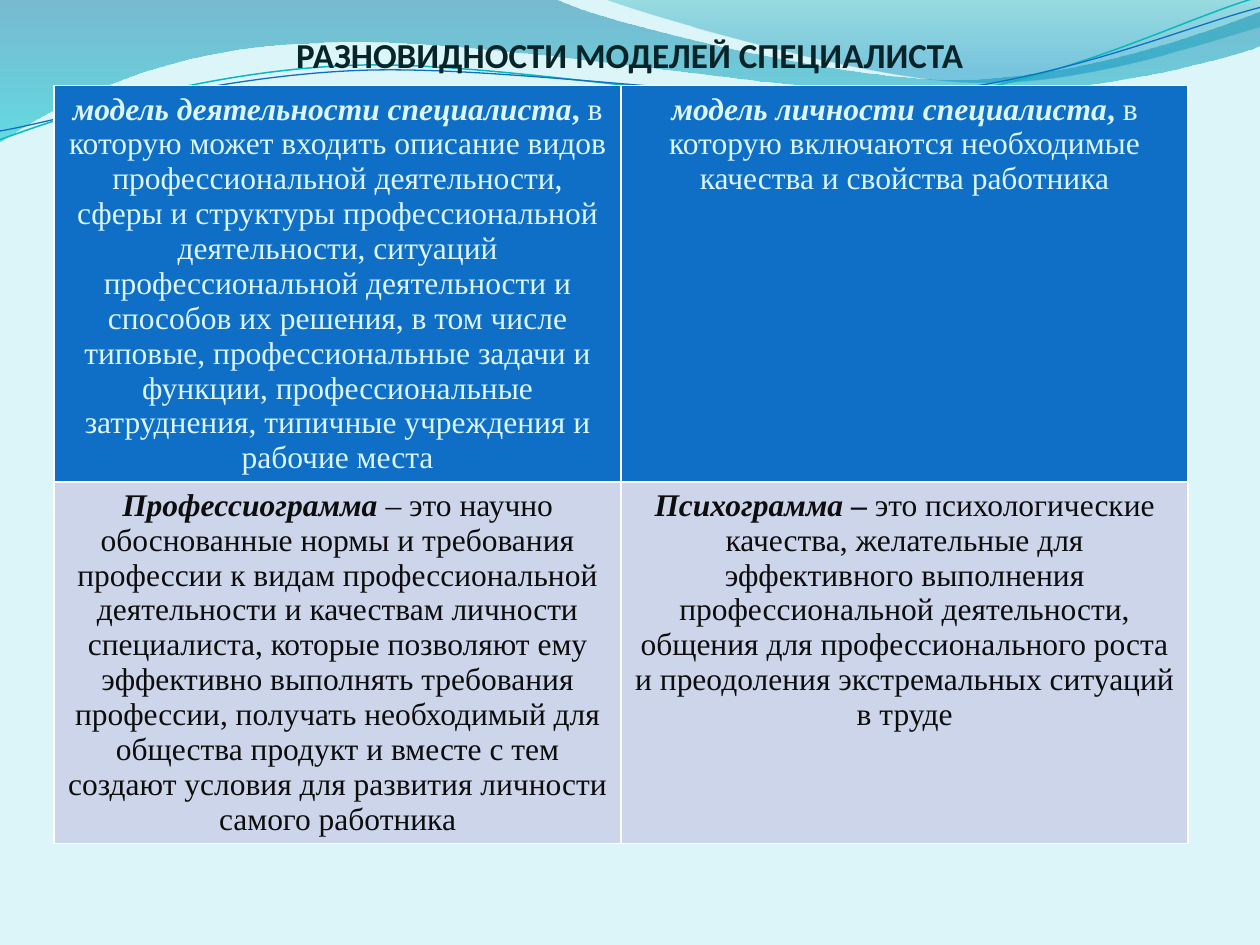
import math

from lxml import etree
from pptx import Presentation
from pptx import util as u
from pptx.dml.color import RGBColor
from pptx.enum import text
from pptx.oxml.ns import qn

PX = 9144  # 100 px to the inch

PALE = RGBColor(0xDB, 0xF5, 0xF9)
BLUE = RGBColor(0x0F, 0x6F, 0xC6)
LILAC = RGBColor(0xCC, 0xD5, 0xEA)
INK = RGBColor(0x07, 0x24, 0x28)
BLACK = RGBColor(0x0D, 0x0D, 0x0D)
TEAL = RGBColor(0x0A, 0xB8, 0xBF)
DEEP = RGBColor(0x00, 0x74, 0xA1)
CYAN = RGBColor(0x00, 0xC6, 0xCF)
GREEN = RGBColor(0x00, 0xA1, 0xA9)
AZURE = RGBColor(0x00, 0x8B, 0xBF)

# Outlines: a start point, then steps of one point (line) or three (curve)
BAND = [[(0, 0)], [(440, -1)],
        [(476, 17), (664, 63), (758, 63)], [(853, 63), (958, 26), (1000, 9)],
        [(1001, 36)],
        [(983, 44), (870, 76), (746, 75)], [(622, 75), (382, 28), (257, 34)],
        [(129, 36), (46, 83), (-1, 113)]]
CREST = [[(479, -1)], [(509, 11), (682, 62), (769, 65)],
         [(856, 69), (961, 32), (1000, 21)], [(1000, 0)]]
UPPER = [[(0, 111)], [(48, 93), (158, 57), (277, 52)],
         [(395, 47), (593, 89), (713, 80)], [(833, 71), (938, 15), (998, -2)]]
LOWER = [[(0, 104)], [(47, 96), (164, 61), (283, 56)],
         [(403, 51), (597, 84), (717, 75)], [(836, 67), (941, 21), (1000, 6)]]
TILT = 357.3

# Each cell is a list of (words, bold, italic)
CELLS = [
    [[("модель деятельности специалиста", True, True), (", ", True, False),
      ("в которую может входить описание видов профессиональной деятельности, "
       "сферы и структуры профессиональной деятельности, ситуаций "
       "профессиональной деятельности и способов их решения, в том числе "
       "типовые, профессиональные задачи и функции, профессиональные "
       "затруднения, типичные учреждения и рабочие места", False, False)],
     [("модель личности специалиста", True, True), (", ", True, False),
      ("в которую включаются необходимые качества и свойства работника",
       False, False)]],
    [[("Профессиограмма ", True, True),
      ("– это научно обоснованные нормы и требования профессии к видам "
       "профессиональной деятельности и качествам личности специалиста, "
       "которые позволяют ему эффективно выполнять требования профессии, "
       "получать необходимый для общества продукт и вместе с тем создают "
       "условия для развития личности самого работника", False, False)],
     [("Психограмма ", True, True), ("– ", True, False),
      ("это психологические качества, желательные для эффективного выполнения "
       "профессиональной деятельности, общения для профессионального роста и "
       "преодоления экстремальных ситуаций в труде", False, False)]],
]


def write(frame, runs, font="Times New Roman", size=18, color=BLACK):
    para = frame.paragraphs[0]
    para.alignment = text.PP_ALIGN.CENTER
    for words, bold, slant in runs:
        run = para.add_run()
        run.text = words
        run.font.name, run.font.size = font, u.Pt(size)
        run.font.bold, run.font.italic = bold, slant
        run.font.color.rgb = color


def turn(spots, mid, angle):
    cos, sin = math.cos(math.radians(angle)), math.sin(math.radians(angle))
    return [(mid[0] + (x - mid[0]) * cos - (y - mid[1]) * sin,
             mid[1] + (x - mid[0]) * sin + (y - mid[1]) * cos)
            for x, y in spots]


def outline(slide, box, steps, close, angle=0):
    left, top, width, height = box
    spots = [spot for step in steps for spot in step]
    spots = turn(spots, (width / 2, height / 2), -angle)
    spots = [((left + x) * PX, (top + y) * PX) for x, y in spots]
    pen = slide.shapes.build_freeform(*spots[0], scale=1.0)
    pen.add_line_segments(spots[1:], close=close)
    shape = pen.convert_to_shape()
    shape.rotation = angle
    shape.shadow.inherit = False
    # Join each run of three lines into one curve
    lines = iter(list(shape._element.iter(qn("a:lnTo"))))
    for step in steps[1:]:
        parts = [next(lines) for _ in step]
        if len(parts) == 3:
            bend = etree.Element(qn("a:cubicBezTo"))
            parts[0].addprevious(bend)
            for part in parts:
                bend.append(part[0])
                part.getparent().remove(part)
    return shape


def wave(slide, box, steps, stops):
    shape = outline(slide, box, steps, True)
    shape.line.fill.background()
    shape.fill.gradient()
    shape.fill.gradient_angle = 270
    for stop, (place, color, _) in zip(shape.fill.gradient_stops, stops):
        stop.position, stop.color.rgb = place, color
    tints = shape._element.spPr.iter(qn("a:srgbClr"))
    for tint, (_, _, alpha) in zip(tints, stops):
        etree.SubElement(tint, qn("a:alpha"), val=str(alpha * 1000))


def curve(slide, box, steps, color, width):
    shape = outline(slide, box, steps, False, TILT)
    shape.fill.background()
    shape.line.color.rgb, shape.line.width = color, u.Pt(width)


def place(shape, box):
    shape.left, shape.top, shape.width, shape.height = (n * PX for n in box)


def waves(slide, box):
    wave(slide, box, BAND, [(0, DEEP, 45), (1, CYAN, 55)])
    wave(slide, box, CREST, [(0, GREEN, 30), (0.8, AZURE, 45)])
    curve(slide, box, UPPER, TEAL, 0.85)
    curve(slide, box, LOWER, BLUE, 0.75)


def heading(slide, box):
    title = slide.shapes.title
    place(title, box)
    slide.shapes._spTree.append(title._element)  # in front of the waves
    frame = title.text_frame
    frame.word_wrap = True
    frame.auto_size = text.MSO_AUTO_SIZE.NONE
    frame.vertical_anchor = text.MSO_ANCHOR.BOTTOM
    frame.margin_left = frame.margin_right = frame.margin_bottom = 0
    frame.margin_top = 5 * PX
    write(frame, [("РАЗНОВИДНОСТИ МОДЕЛЕЙ СПЕЦИАЛИСТА", True, False)],
          font="Calibri", size=20, color=INK)


def models(slide, box):
    holder = slide.shapes.add_table(2, 2, *(n * PX for n in box))
    table = holder.table
    looks = [(BLUE, PALE), (LILAC, BLACK)]
    for r, (back, color) in enumerate(looks):
        table.rows[r].height = 41 * PX  # rows grow with their text
        for c, runs in enumerate(CELLS[r]):
            cell = table.cell(r, c)
            cell.fill.solid()
            cell.fill.fore_color.rgb = back
            write(cell.text_frame, runs, color=color)
    place(holder, box)


def main():
    deck = Presentation()
    deck.slide_width, deck.slide_height = 1000 * PX, 750 * PX
    slide = deck.slides.add_slide(deck.slide_layouts[5])
    slide.background.fill.solid()
    slide.background.fill.fore_color.rgb = PALE
    waves(slide, (0, 0, 1000, 113))
    heading(slide, (50, 21, 900, 39))
    models(slide, (43, 68, 900, 650))
    deck.save("out.pptx")


if __name__ == "__main__":
    main()
